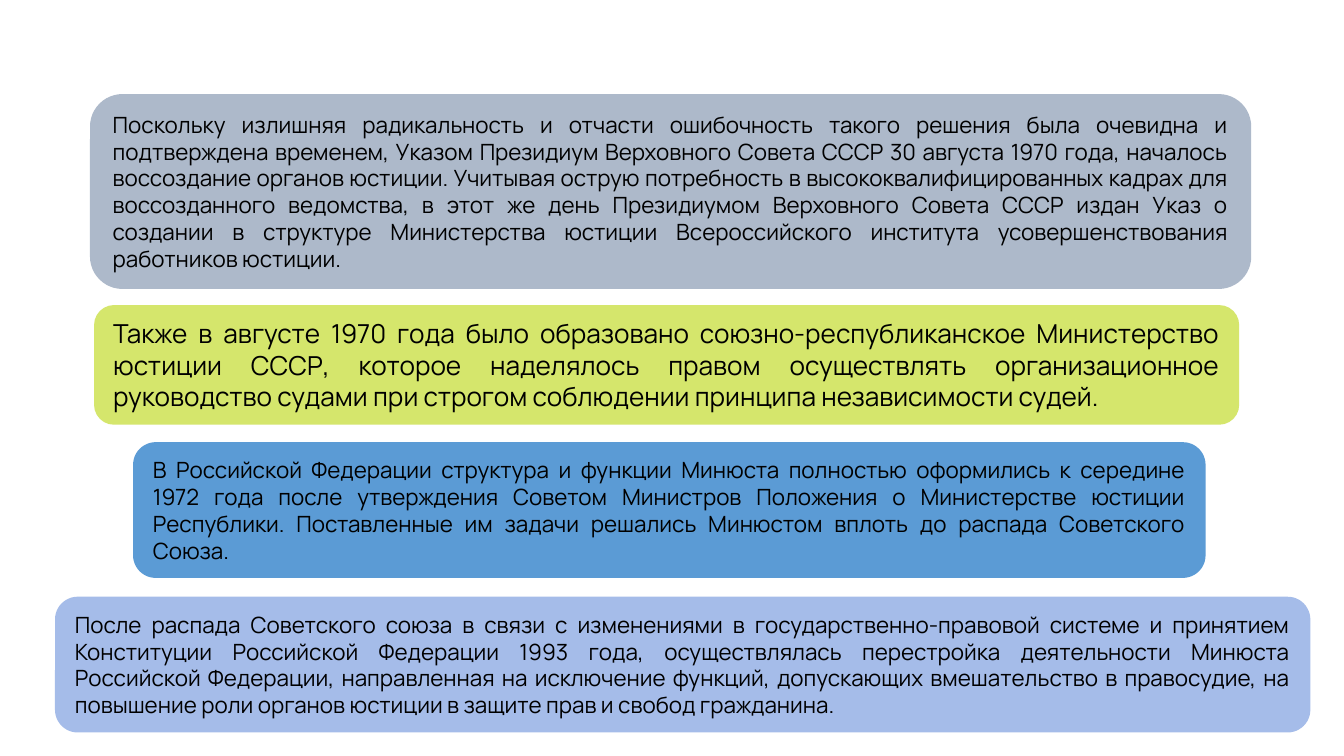
import pptx
import pptx.dml.color
import pptx.enum.shapes
import pptx.enum.text
import pptx.util
from pptx.util import Inches

FONT = "Manrope"
COLORS = {
    "text": "000000",
    "grey": "ADB9CA",
    "lime": "D5E66C",
    "blue": "5B9BD5",
    "lavender": "A5BCE9",
}

# Box (left, top, width, height) in inches, fill, text size, text
STAGES = [
    ((0.67, 0.7, 8.64, 1.45), "grey", 12,
     "Поскольку излишняя радикальность и отчасти ошибочность такого решения "
     "была очевидна и подтверждена временем, Указом Президиум Верховного Совета "
     "СССР 30 августа 1970 года, началось воссоздание органов юстиции. Учитывая "
     "острую потребность в высококвалифицированных кадрах для воссозданного "
     "ведомства, в этот же день Президиумом Верховного Совета СССР издан Указ о "
     "создании в структуре Министерства юстиции Всероссийского института "
     "усовершенствования работников юстиции."),
    ((0.7, 2.27, 8.52, 0.89), "lime", 14,
     "Также в августе 1970 года было образовано союзно-республиканское "
     "Министерство юстиции СССР, которое наделялось правом осуществлять "
     "организационное руководство судами при строгом соблюдении принципа "
     "независимости судей."),
    ((0.99, 3.29, 7.98, 1.01), "blue", 12,
     "В Российской Федерации структура и функции Минюста полностью оформились к "
     "середине 1972 года после утверждения Советом Министров Положения о "
     "Министерстве юстиции Республики. Поставленные им задачи решались Минюстом "
     "вплоть до распада Советского Союза."),
    ((0.41, 4.44, 9.34, 1.01), "lavender", 12,
     "После распада Советского союза в связи с изменениями в "
     "государственно-правовой системе и принятием Конституции Российской "
     "Федерации 1993 года, осуществлялась перестройка деятельности Минюста "
     "Российской Федерации, направленная на исключение функций, допускающих "
     "вмешательство в правосудие, на повышение роли органов юстиции в защите "
     "прав и свобод гражданина."),
]


def rgb(name):
    return pptx.dml.color.RGBColor.from_string(COLORS[name])


def write_text(frame, text, *, size, color="text",
               align=pptx.enum.text.PP_ALIGN.JUSTIFY):
    frame.word_wrap = True
    frame.vertical_anchor = pptx.enum.text.MSO_ANCHOR.MIDDLE
    paragraph = frame.paragraphs[0]
    paragraph.alignment = align
    run = paragraph.add_run()
    run.text = text
    run.font.name = FONT
    run.font.size = pptx.util.Pt(size)
    run.font.color.rgb = rgb(color)


def add_stage(slide, box, fill, size, text):
    """Add one rounded panel describing a stage of the ministry's history."""
    panel = slide.shapes.add_shape(
        pptx.enum.shapes.MSO_SHAPE.ROUNDED_RECTANGLE, *map(Inches, box))
    panel.shadow.inherit = False
    panel.fill.solid()
    panel.fill.fore_color.rgb = rgb(fill)
    panel.line.fill.background()
    write_text(panel.text_frame, text, size=size)
    panel.text_frame.auto_size = pptx.enum.text.MSO_AUTO_SIZE.SHAPE_TO_FIT_TEXT


def main():
    presentation = pptx.Presentation()
    presentation.slide_width = Inches(10)
    presentation.slide_height = presentation.slide_width * 9 // 16
    blank_layout = presentation.slide_layouts[6]
    slide = presentation.slides.add_slide(blank_layout)
    for box, fill, size, text in STAGES:
        add_stage(slide, box, fill, size, text)
    presentation.save("out.pptx")


if __name__ == "__main__":
    main()
